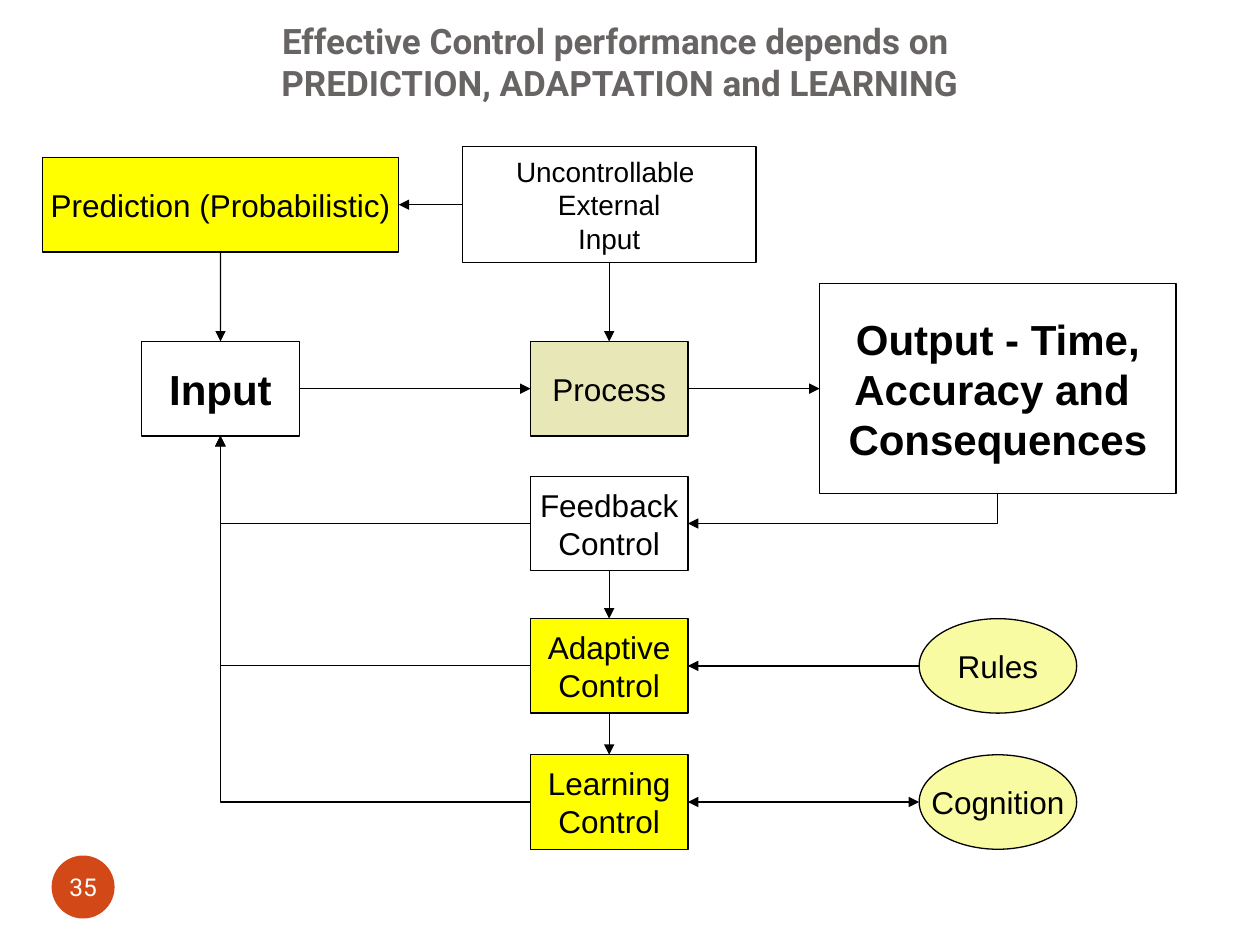
from dataclasses import dataclass

from lxml.etree import SubElement
from pptx import Presentation
from pptx.dml.color import RGBColor
from pptx.enum.shapes import MSO_CONNECTOR, MSO_SHAPE
from pptx.enum.text import MSO_ANCHOR, PP_ALIGN
from pptx.oxml.ns import qn
from pptx.util import Inches, Pt

COLUMN_START, COLUMN_STEP = 1.75, 3.085
ROW_CENTRES = (1.625, 3.085, 4.155, 5.285, 6.365)
TOP, LEFT, BOTTOM, RIGHT = range(4)
BLACK, YELLOW, PALE, OLIVE = "000000", "FFFF00", "F9FBA3", "E7E7B7"


@dataclass(frozen=True)
class Node:
    """One box of the flow chart, centred on a grid column and row."""
    lines: tuple[str, ...]
    column: int
    row: int
    width: float = 1.25
    height: float = 0.75
    fill: str | None = None
    size: int = 18
    bold: bool = False
    oval: bool = False

    @property
    def centre(self) -> tuple[float, float]:
        return COLUMN_START + self.column * COLUMN_STEP, ROW_CENTRES[self.row]

    def side(self, side: int) -> tuple[float, float]:
        x, y = self.centre
        across, down = ((0, -1), (-1, 0), (0, 1), (1, 0))[side]
        return x + across * self.width / 2, y + down * self.height / 2


@dataclass(frozen=True)
class Link:
    """A line between two box sides; a bent one leaves its start sideways."""
    start: str
    start_side: int
    end: str
    end_side: int
    bent: bool = False
    arrows: tuple[str, ...] = ("tailEnd",)


NODES = {
    "input": Node(("Input",), 0, 1, size=24, bold=True),
    "adaptive": Node(("Adaptive", "Control"), 1, 3, fill=YELLOW),
    "process": Node(("Process",), 1, 1, fill=OLIVE),
    "output": Node(("Output - Time,", "Accuracy and ", "Consequences"), 2, 1,
                   width=2.83, height=1.67, size=24, bold=True),
    "feedback": Node(("Feedback", "Control"), 1, 2),
    "prediction": Node(("Prediction (Probabilistic)",), 0, 0, width=2.83, fill=YELLOW),
    "external": Node(("Uncontrollable ", "External", "Input"), 1, 0,
                     width=2.33, height=0.92, size=16),
    "learning": Node(("Learning", "Control"), 1, 4, fill=YELLOW),
    "cognition": Node(("Cognition",), 2, 4, fill=PALE, oval=True),
    "rules": Node(("Rules",), 2, 3, fill=PALE, oval=True),
}

LINKS = (
    Link("input", RIGHT, "process", LEFT),
    Link("cognition", LEFT, "learning", RIGHT, arrows=("headEnd", "tailEnd")),
    Link("external", BOTTOM, "process", TOP),
    Link("process", RIGHT, "output", LEFT),
    Link("feedback", RIGHT, "output", BOTTOM, bent=True, arrows=("headEnd",)),
    *(Link(name, LEFT, "input", BOTTOM, bent=True)
      for name in ("feedback", "adaptive", "learning")),
    Link("rules", LEFT, "adaptive", RIGHT),
    Link("prediction", BOTTOM, "input", TOP),
    Link("external", LEFT, "prediction", RIGHT),
    Link("feedback", BOTTOM, "adaptive", TOP),
    Link("adaptive", BOTTOM, "learning", TOP),
)


def colour(value: str) -> RGBColor:
    return RGBColor.from_string(value)


def write(box, *lines: str, size: int, font: str = "Arial", ink: str = BLACK,
          bold: bool = False, wrap: bool = False, anchor=MSO_ANCHOR.MIDDLE,
          insets: tuple[float, ...] = (0.1, 0.05, 0.1, 0.05)) -> None:
    """Write one centred paragraph per line; insets run left, top, right, bottom."""
    frame = box.text_frame
    frame.word_wrap = wrap
    frame.vertical_anchor = anchor
    (frame.margin_left, frame.margin_top,
     frame.margin_right, frame.margin_bottom) = map(Inches, insets)
    for index, line in enumerate(lines):
        para = frame.add_paragraph() if index else frame.paragraphs[0]
        para.text = line
        para.alignment = PP_ALIGN.CENTER
        for span in para.runs:
            span.font.name = font
            span.font.size = Pt(size)
            span.font.bold = bold
            span.font.color.rgb = colour(ink)


def add_box(page, kind, left: float, top: float, width: float, height: float,
            fill: str | None = None, line: str | None = None):
    box = page.shapes.add_shape(kind, *map(Inches, (left, top, width, height)))
    box.shadow.inherit = False
    if fill:
        box.fill.solid()
        box.fill.fore_color.rgb = colour(fill)
    else:
        box.fill.background()
    if line:
        box.line.color.rgb = colour(line)
        box.line.width = Pt(0.75)
    else:
        box.line.fill.background()
    return box


def draw_node(page, node: Node):
    x, y = node.centre
    kind = MSO_SHAPE.OVAL if node.oval else MSO_SHAPE.RECTANGLE
    box = add_box(page, kind, x - node.width / 2, y - node.height / 2,
                  node.width, node.height, node.fill, BLACK)
    write(box, *node.lines, size=node.size, bold=node.bold)
    return box


def draw_link(page, link: Link, boxes: dict) -> None:
    start, end = NODES[link.start], NODES[link.end]
    points = (*start.side(link.start_side), *end.side(link.end_side))
    kind = MSO_CONNECTOR.ELBOW if link.bent else MSO_CONNECTOR.STRAIGHT
    connector = page.shapes.add_connector(kind, *map(Inches, points))
    if not start.oval:
        connector.begin_connect(boxes[link.start], link.start_side)
    if not end.oval:
        connector.end_connect(boxes[link.end], link.end_side)
    connector.line.color.rgb = colour(BLACK)
    connector.line.width = Pt(0.75)
    properties = connector._element.spPr
    if link.bent:
        properties.find(qn("a:prstGeom")).set("prst", "bentConnector2")
    for arrow in link.arrows:
        SubElement(properties.find(qn("a:ln")), qn(f"a:{arrow}"), type="triangle")
    SubElement(properties, qn("a:effectLst"))


def main() -> None:
    deck = Presentation()
    deck.slide_width, deck.slide_height = Inches(10), Inches(7.5)
    page = deck.slides.add_slide(deck.slide_layouts[6])

    title = page.shapes.add_textbox(*map(Inches, (0.42, 0.17, 9, 0.75)))
    write(title, "Effective Control performance depends on \n"
          "PREDICTION, ADAPTATION and LEARNING", size=20, font="Roboto",
          ink="696464", bold=True, wrap=True, anchor=MSO_ANCHOR.BOTTOM,
          insets=(0.1, 0.05, 0.1, 0.1))

    badge = add_box(page, MSO_SHAPE.OVAL, 0.41, 6.79, 0.5, 0.5, fill="D34817")
    write(badge, "35", size=14, font="Roboto", ink="FFFFFF", insets=(0, 0, 0, 0))

    boxes = {name: draw_node(page, node) for name, node in NODES.items()}
    for link in LINKS:
        draw_link(page, link, boxes)
    deck.save("out.pptx")


if __name__ == "__main__":
    main()
